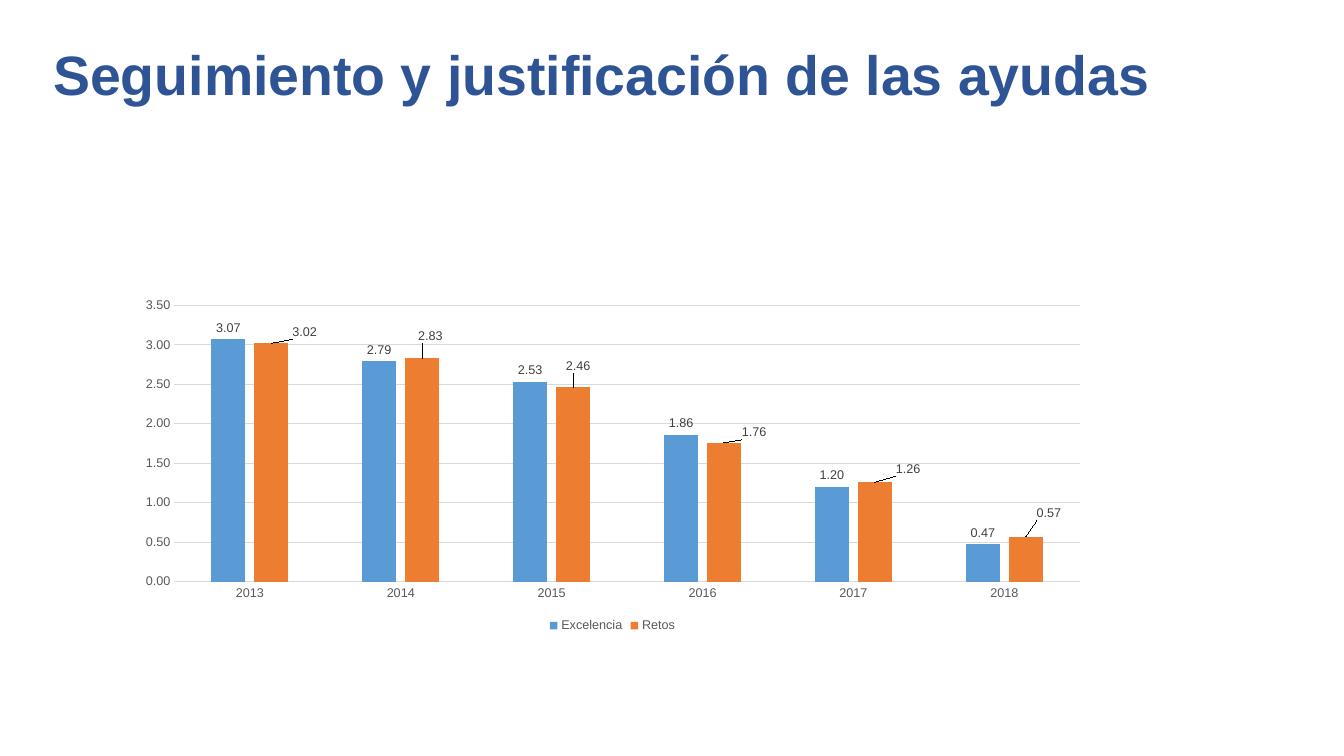
from dataclasses import dataclass

from lxml.etree import SubElement
from pptx import Presentation
from pptx.chart.chart import Chart
from pptx.chart.data import CategoryChartData
from pptx.dml.color import RGBColor
from pptx.enum.chart import XL_CHART_TYPE as ChartType
from pptx.enum.chart import XL_LABEL_POSITION as LabelPosition
from pptx.enum.chart import XL_LEGEND_POSITION as LegendPosition
from pptx.enum.chart import XL_TICK_MARK as TickMark
from pptx.enum.text import MSO_ANCHOR as Anchor
from pptx.oxml.ns import qn
from pptx.slide import Slide
from pptx.text.text import Font
from pptx.util import Inches, Pt


@dataclass(frozen=True)
class Theme:
    font: str = "Arial"
    title: str = "2E5496"
    axis_text: str = "595959"
    label_text: str = "404040"
    grid: str = "D9D9D9"
    title_size: float = 39.6
    chart_size: float = 10
    small_size: float = 9
    line_width: float = 0.75


@dataclass(frozen=True)
class Box:
    left: float
    top: float
    width: float
    height: float


@dataclass(frozen=True)
class AidSeries:
    name: str
    color: str
    values: tuple[float, ...]
    # Label shifts in inches, one (right, down) pair per year
    label_shifts: tuple[tuple[float, float], ...] = ()


THEME = Theme()
TITLE_BOX = Box(0.43, 0.35, 11.5, 0.84)
CHART_BOX = Box(1.25, 2.89, 9.65, 3.43)
PLOT_BOX = Box(0.48, 0.14, 8.98, 2.74)  # measured inside the chart
YEARS = [str(year) for year in range(2013, 2019)]
AIDS = (
    AidSeries("Excelencia", "5B9BD5", (3.07, 2.79, 2.53, 1.86, 1.20, 0.47)),
    AidSeries(
        "Retos", "ED7D31", (3.02, 2.83, 2.46, 1.76, 1.26, 0.57),
        ((0.33, 0), (0.08, -0.11), (0.05, -0.1),
         (0.3, 0.01), (0.33, -0.02), (0.23, -0.12)),
    ),
)


def style_font(font: Font, size: float, color: str, bold: bool = False) -> None:
    font.name = THEME.font
    font.size = Pt(size)
    font.bold = bold
    font.color.rgb = RGBColor.from_string(color)


def add_manual_layout(layout, settings: dict[str, object]) -> None:
    manual = SubElement(layout, qn("c:manualLayout"))
    for tag, value in settings.items():
        SubElement(manual, qn(f"c:{tag}")).set("val", str(value))


def add_title(slide: Slide, text: str, box: Box) -> None:
    shape = slide.shapes.add_textbox(
        Inches(box.left), Inches(box.top), Inches(box.width), Inches(box.height))
    frame = shape.text_frame
    frame.word_wrap = True
    frame.vertical_anchor = Anchor.MIDDLE
    paragraph = frame.paragraphs[0]
    paragraph.line_spacing = 0.9
    run = paragraph.add_run()
    run.text = text
    style_font(run.font, THEME.title_size, THEME.title, bold=True)


def style_axes(chart: Chart) -> None:
    for axis in (chart.category_axis, chart.value_axis):
        axis.major_tick_mark = axis.minor_tick_mark = TickMark.NONE
        style_font(axis.tick_labels.font, THEME.small_size, THEME.axis_text)
    chart.value_axis.has_major_gridlines = True
    chart.value_axis.format.line.fill.background()
    chart.value_axis.minimum_scale = 0
    chart.value_axis.maximum_scale = 3.5
    chart.value_axis.major_unit = 0.5
    chart.value_axis.tick_labels.number_format = "0.00"
    chart.value_axis.tick_labels.number_format_is_linked = False
    for line in (chart.category_axis.format.line,
                 chart.value_axis.major_gridlines.format.line):
        line.color.rgb = RGBColor.from_string(THEME.grid)
        line.width = Pt(THEME.line_width)


def style_series(series, aid: AidSeries) -> None:
    series.format.fill.solid()
    series.format.fill.fore_color.rgb = RGBColor.from_string(aid.color)
    series.invert_if_negative = False
    labels = series.data_labels
    labels.show_value = True
    labels.number_format = "0.00"
    labels.number_format_is_linked = False
    labels.position = LabelPosition.OUTSIDE_END
    style_font(labels.font, THEME.small_size, THEME.label_text)

    # Labels moved away from their bars
    for index, (right, down) in enumerate(aid.label_shifts):
        label = series.points[index].data_label
        style_font(label.font, THEME.small_size, THEME.label_text)
        label.position = LabelPosition.OUTSIDE_END
        element = series._element.xpath(f".//c:dLbl[c:idx/@val='{index}']")[0]
        layout = SubElement(element, qn("c:layout"))
        element.insert(1, layout)
        add_manual_layout(layout, {
            "x": right / CHART_BOX.width, "y": down / CHART_BOX.height})


def place_plot(chart: Chart, plot: Box, frame: Box) -> None:
    area = chart._chartSpace.xpath("c:chart/c:plotArea")[0]
    for old_layout in area.findall(qn("c:layout")):
        area.remove(old_layout)
    layout = SubElement(area, qn("c:layout"))
    area.insert(0, layout)
    add_manual_layout(layout, {
        "layoutTarget": "inner", "xMode": "edge", "yMode": "edge",
        "x": plot.left / frame.width, "y": plot.top / frame.height,
        "w": plot.width / frame.width, "h": plot.height / frame.height})


def add_aid_chart(slide: Slide, box: Box) -> None:
    data = CategoryChartData(number_format="0.00")
    data.categories = YEARS
    for aid in AIDS:
        data.add_series(aid.name, aid.values)
    chart = slide.shapes.add_chart(
        ChartType.COLUMN_CLUSTERED, Inches(box.left), Inches(box.top),
        Inches(box.width), Inches(box.height), data).chart
    style_font(chart.font, THEME.chart_size, "000000")
    chart.has_title = False
    chart.has_legend = True
    chart.legend.position = LegendPosition.BOTTOM
    chart.legend.include_in_layout = False
    style_font(chart.legend.font, THEME.small_size, THEME.axis_text)
    style_axes(chart)
    plot = chart.plots[0]
    plot.gap_width = 219
    plot.overlap = -27
    plot.vary_by_categories = False
    for series, aid in zip(plot.series, AIDS):
        style_series(series, aid)
    place_plot(chart, PLOT_BOX, box)


def main() -> None:
    presentation = Presentation()
    presentation.slide_width = Inches(13.33)
    presentation.slide_height = Inches(7.5)
    slide = presentation.slides.add_slide(presentation.slide_layouts[6])
    add_title(slide, "Seguimiento y justificación de las ayudas", TITLE_BOX)
    add_aid_chart(slide, CHART_BOX)
    presentation.save("out.pptx")


if __name__ == "__main__":
    main()
